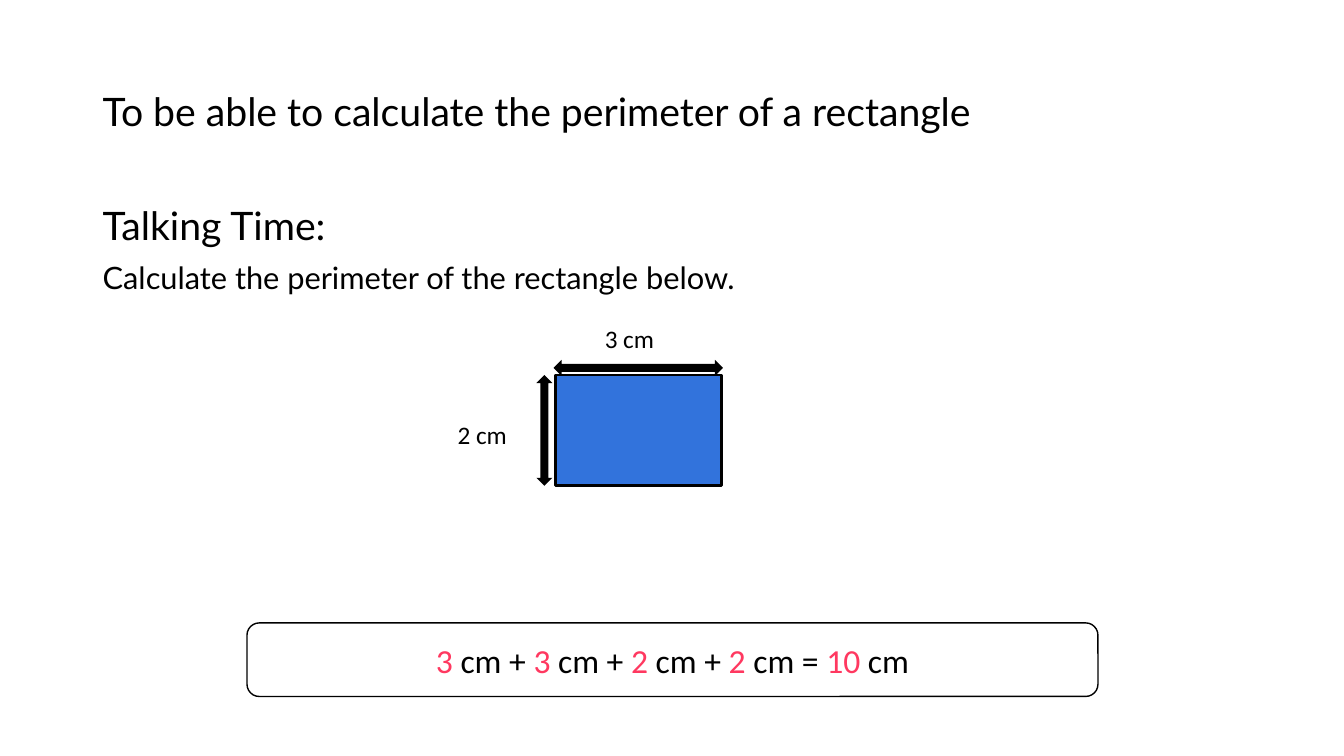
from pptx import Presentation
from pptx import util as u
from pptx.dml.color import RGBColor
from pptx.enum import shapes, text

WIDTH, HEIGHT = 13.33, 7.5
BLACK, WHITE, BLUE, RED = "000000", "FFFFFF", "3273DC", "FF3860"
HEADING = {"name": "Lato", "size": u.Pt(28)}
INSTRUCTION = {"name": "Lato", "size": u.Pt(22)}
LABEL = {"name": "Calibri", "size": u.Pt(18)}
ANSWER = {"name": "Calibri", "size": u.Pt(24)}


def color(hex_string):
    """Return the colour for a hex string."""
    return RGBColor.from_string(hex_string)


def add_run(paragraph, words, style, ink=BLACK):
    """Append a run with the given font values and colour."""
    run = paragraph.add_run()
    run.text = words
    for name, value in style.items():
        setattr(run.font, name, value)
    run.font.color.rgb = color(ink)


def add_text(slide, box, lines, anchor=text.MSO_ANCHOR.TOP, wrap=True):
    """Place a text box holding one paragraph per (words, style) pair."""
    frame = slide.shapes.add_textbox(*map(u.Inches, box)).text_frame
    frame.word_wrap = wrap
    frame.vertical_anchor = anchor
    for index, (words, style) in enumerate(lines):
        paragraph = frame.paragraphs[0] if index == 0 else frame.add_paragraph()
        if wrap:
            paragraph.line_spacing = 0.9
        if index:
            paragraph.space_before = u.Pt(10)
        add_run(paragraph, words, style)


def add_block(slide, kind, box, fill, line_width=0):
    """Place a filled preset shape, outlined in black when a width is given."""
    shape = slide.shapes.add_shape(kind, *map(u.Inches, box))
    shape.shadow.inherit = False
    shape.fill.solid()
    shape.fill.fore_color.rgb = color(fill)
    if line_width:
        shape.line.color.rgb = color(BLACK)
        shape.line.width = u.Pt(line_width)
    else:
        shape.line.fill.background()
    return shape


def add_rectangle_diagram(slide, box):
    """Draw the rectangle in its box with a measuring arrow and label per side."""
    left, top, width, height = box
    kinds = shapes.MSO_SHAPE
    thickness = 0.16
    add_block(slide, kinds.RECTANGLE, box, BLUE, 2)
    add_block(slide, kinds.LEFT_RIGHT_ARROW,
              (left - 0.02, top - 0.15, width + 0.03, thickness), BLACK)
    add_block(slide, kinds.UP_DOWN_ARROW,
              (left - 0.19, top, thickness, height), BLACK)
    add_text(slide, (left - 1.07, top + 0.39, 0.85, 0.4), [("2 cm", LABEL)], wrap=False)
    add_text(slide, (left + 0.39, top - 0.56, 0.85, 0.4), [("3 cm", LABEL)], wrap=False)


def add_answer(slide, box, sides, total):
    """Draw the rounded box with the sum of the sides, numbers in red."""
    shape = add_block(slide, shapes.MSO_SHAPE.ROUNDED_RECTANGLE, box, WHITE, 1)
    shape.text_frame.vertical_anchor = text.MSO_ANCHOR.MIDDLE
    paragraph = shape.text_frame.paragraphs[0]
    paragraph.alignment = text.PP_ALIGN.CENTER
    units = [" cm + "] * (len(sides) - 1) + [" cm = ", " cm"]
    for number, unit in zip([*sides, total], units):
        add_run(paragraph, str(number), ANSWER, RED)
        add_run(paragraph, unit, ANSWER)


def main():
    """Build the slide and save it."""
    presentation = Presentation()
    presentation.slide_width = u.Inches(WIDTH)
    presentation.slide_height = u.Inches(HEIGHT)
    slide = presentation.slides.add_slide(presentation.slide_layouts[6])
    margin = 0.92
    add_text(slide, (margin, 0.4, 9.6, 1.45),
             [("To be able to calculate the perimeter of a rectangle", HEADING)],
             text.MSO_ANCHOR.MIDDLE)
    add_text(slide, (margin, 2, WIDTH - 2 * margin, 4.76),
             [("Talking Time:", HEADING),
              ("Calculate the perimeter of the rectangle below.", INSTRUCTION)])
    add_rectangle_diagram(slide, (5.51, 3.72, 1.65, 1.1))
    add_answer(slide, (2.45, 6.18, 8.44, 0.73), [3, 3, 2, 2], 10)
    presentation.save("out.pptx")


if __name__ == "__main__":
    main()
